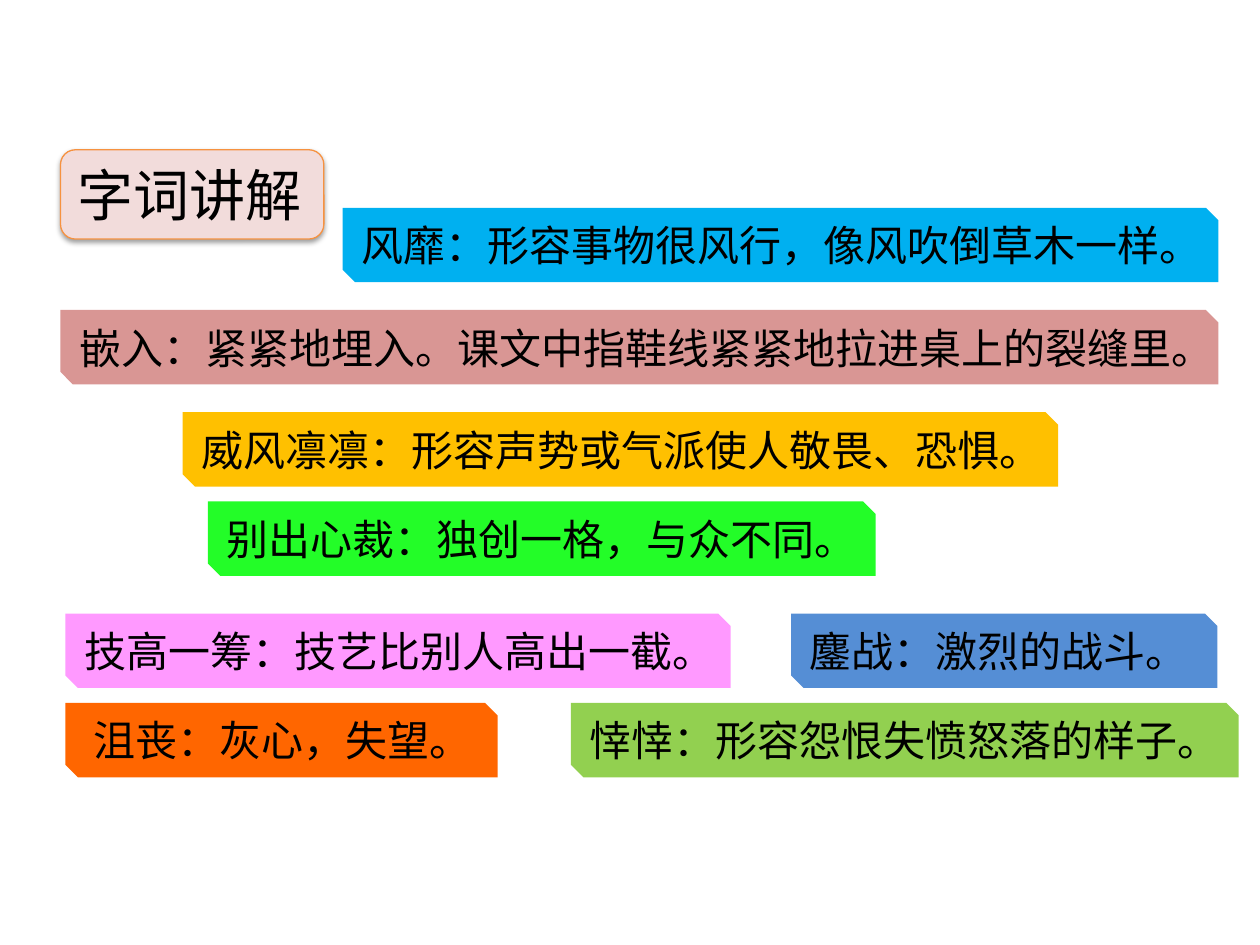
from lxml.etree import SubElement
from pptx import Presentation
from pptx.dml.color import RGBColor
from pptx.enum.shapes import MSO_SHAPE
from pptx.enum.text import MSO_ANCHOR, MSO_AUTO_SIZE, PP_ALIGN
from pptx.oxml.ns import qn
from pptx.util import Cm, Pt

# Content: each row has a top and its words as (left, width, colour, text), in cm
TITLE = "字词讲解"
ROWS = [
    (4.19, [(6.91, 17.65, "blue", "风靡：形容事物很风行，像风吹倒草木一样。")]),
    (6.25, [(1.22, 23.34, "rose", "嵌入：紧紧地埋入。课文中指鞋线紧紧地拉进桌上的裂缝里。")]),
    (8.31, [(3.68, 17.65, "gold", "威风凛凛：形容声势或气派使人敬畏、恐惧。")]),
    (10.11, [(4.19, 13.46, "green", "别出心裁：独创一格，与众不同。")]),
    (12.37, [(1.32, 13.41, "pink", "技高一筹：技艺比别人高出一截。"),
             (15.95, 8.59, "steel", "鏖战：激烈的战斗。")]),
    (14.17, [(1.32, 8.71, "orange", " 沮丧：灰心，失望。"),
             (11.51, 13.46, "lime", "悻悻：形容怨恨失愤怒落的样子。")]),
]
WORD_H = 1.5

THEME = {
    "font": "Noto Sans CJK SC", "title_size": 32, "word_size": 24,
    "text": "000000", "title_fill": "F2DCDB", "title_line": "F69240",
    "blue": "00B0F0", "rose": "D99694", "gold": "FFC000", "green": "23FD28",
    "pink": "FF99FF", "steel": "558ED5", "orange": "FF6600", "lime": "92D050",
}


def color(name):
    return RGBColor.from_string(THEME[name])


def add_box(s, kind, left, top, width, height, fill, text, size, wrap):
    sp = s.shapes.add_shape(kind, Cm(left), Cm(top), Cm(width), Cm(height))
    sp.shadow.inherit = False
    sp.fill.solid()
    sp.fill.fore_color.rgb = color(fill)
    sp.line.fill.background()
    tf = sp.text_frame
    tf.text = text
    tf.word_wrap = wrap
    tf.auto_size = MSO_AUTO_SIZE.SHAPE_TO_FIT_TEXT
    tf.vertical_anchor = MSO_ANCHOR.MIDDLE
    p = tf.paragraphs[0]
    p.alignment = PP_ALIGN.LEFT
    r = p.runs[0]
    r.font.size = Pt(THEME[size])
    r.font.name = THEME["font"]
    r.font.color.rgb = color("text")
    SubElement(r.font._element, qn("a:ea"), typeface=THEME["font"])
    return sp


def add_shadow(sp):
    effects = sp._element.spPr.find(qn("a:effectLst"))
    shadow = SubElement(effects, qn("a:outerShdw"), blurRad=str(Pt(3.1)),
                        dist=str(Pt(1.6)), dir="5400000", rotWithShape="0")
    clr = SubElement(shadow, qn("a:srgbClr"), val=THEME["text"])
    SubElement(clr, qn("a:alpha"), val="38000")


def main():
    prs = Presentation()
    prs.slide_width, prs.slide_height = Cm(25.4), Cm(19.05)
    s = prs.slides.add_slide(prs.slide_layouts[6])

    # Heading
    title = add_box(s, MSO_SHAPE.ROUNDED_RECTANGLE, 1.22, 3.02, 5.31, 1.8,
                    "title_fill", TITLE, "title_size", True)
    title.line.color.rgb = color("title_line")
    title.line.width = Pt(0.75)
    add_shadow(title)

    # Word explanations; only the full-width one wraps
    for top, words in ROWS:
        for left, width, fill, text in words:
            add_box(s, MSO_SHAPE.SNIP_2_DIAG_RECTANGLE, left, top, width, WORD_H,
                    fill, text, "word_size", width > 20)

    prs.save("out.pptx")


if __name__ == "__main__":
    main()
